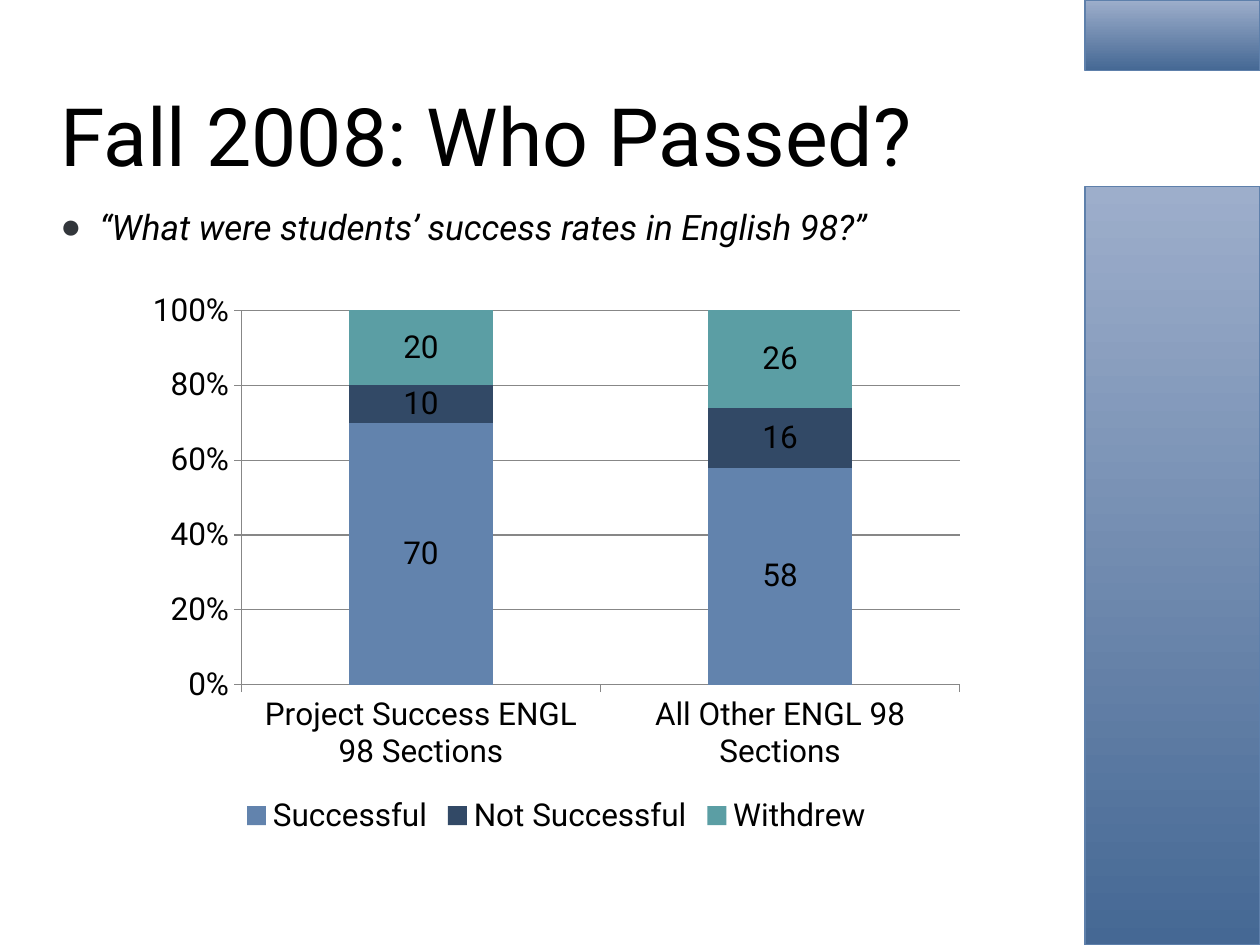
from dataclasses import dataclass

from lxml.etree import SubElement
from pptx import Presentation
from pptx.chart.data import CategoryChartData
from pptx.dml.color import RGBColor as Rgb
from pptx.enum.chart import XL_CHART_TYPE as Kind
from pptx.enum.chart import XL_LEGEND_POSITION as Place
from pptx.enum.chart import XL_TICK_MARK as Tick
from pptx.enum.shapes import MSO_SHAPE as Shape
from pptx.enum.text import MSO_ANCHOR as Anchor
from pptx.enum.text import MSO_AUTO_SIZE as Fit
from pptx.enum.text import PP_ALIGN as Align
from pptx.oxml.ns import qn
from pptx.util import Inches, Pt


@dataclass(frozen=True)
class Theme:
    """Hold the colours, the font and the type sizes."""
    face: str = "Roboto"
    ink: str = "000000"
    dot: str = "32363B"
    edge: str = "5E80AB"
    dark: str = "456894"
    light: str = "9DAECB"
    grid: str = "878787"
    bars: tuple = ("6283AD", "324966", "5B9EA4")
    title: int = 46
    body: int = 20
    chart: int = 18


THEME = Theme()


def color(code):
    """Return the colour for a hex code."""
    return Rgb.from_string(code)


def style(font, size):
    """Give a font the theme's face and ink."""
    font.name = THEME.face
    font.size = Pt(size)
    font.color.rgb = color(THEME.ink)


def place(shape, left, top, width, height):
    """Move and size a shape, in inches."""
    shape.left, shape.top = Inches(left), Inches(top)
    shape.width, shape.height = Inches(width), Inches(height)


def write(shape, text, size, anchor):
    """Fill a placeholder with one left-aligned paragraph."""
    frame = shape.text_frame
    frame.text = text
    frame.word_wrap = True
    frame.auto_size = Fit.NONE
    frame.vertical_anchor = anchor
    para = frame.paragraphs[0]
    para.alignment = Align.LEFT
    para.space_before = Pt(0)
    return para


def add_title(slide, text):
    """Set the slide title."""
    shape = slide.shapes.title
    place(shape, 0.38, 0.53, 7.75, 1.07)
    para = write(shape, text, THEME.title, Anchor.MIDDLE)
    style(para.font, THEME.title)


def add_list(slide, text):
    """Set the bulleted question."""
    shape = slide.placeholders[1]
    place(shape, 0.38, 1.58, 7.75, 5.12)
    para = write(shape, text, THEME.body, Anchor.TOP)
    props = para._p.get_or_add_pPr()
    props.set("marL", str(Inches(0.31)))
    props.set("indent", str(-Inches(0.31)))
    tint = SubElement(props, qn("a:buClr"))
    SubElement(tint, qn("a:srgbClr"), val=THEME.dot)
    SubElement(props, qn("a:buChar"), char="●")
    style(para.font, THEME.body)
    para.font.italic = True


def add_panel(slide, top, height):
    """Add a shaded panel at the right edge."""
    shape = slide.shapes.add_shape(
        Shape.RECTANGLE, Inches(8.61), Inches(top), Inches(1.39), Inches(height))
    shape.shadow.inherit = False
    shape.fill.gradient()
    shape.fill.gradient_angle = 90
    for stop, code in zip(shape.fill.gradient_stops, (THEME.dark, THEME.light)):
        stop.color.rgb = color(code)
    shape.line.color.rgb = color(THEME.edge)
    shape.line.width = Pt(1)


def add_chart(slide, cats, rows):
    """Add the stacked column chart."""
    data = CategoryChartData(number_format="#,##0")
    data.categories = cats
    for name, vals in rows:
        data.add_series(name, vals)
    chart = slide.shapes.add_chart(
        Kind.COLUMN_STACKED_100, Inches(1.08), Inches(2.23),
        Inches(6.67), Inches(4.44), data).chart
    style(chart.font, THEME.chart)
    chart.has_title = False
    chart.has_legend = True
    chart.legend.position = Place.BOTTOM
    chart.legend.include_in_layout = False

    axis = chart.value_axis
    axis.minimum_scale, axis.maximum_scale = 0, 1
    axis.major_unit = 0.2
    axis.tick_labels.number_format = "0%"
    axis.tick_labels.number_format_is_linked = False
    axis.has_major_gridlines = True
    for item in (axis, chart.category_axis):
        item.major_tick_mark = Tick.OUTSIDE
        item.format.line.color.rgb = color(THEME.grid)
    axis.major_gridlines.format.line.color.rgb = color(THEME.grid)

    plot = chart.plots[0]
    plot.vary_by_categories = False
    plot.gap_width, plot.overlap = 150, 100
    for row, code in zip(plot.series, THEME.bars):
        row.format.fill.solid()
        row.format.fill.fore_color.rgb = color(code)
        tags = row.data_labels
        tags.show_value = True
        tags.number_format = "#,##0"
        tags.number_format_is_linked = False
        style(tags.font, THEME.chart)


def main():
    """Build and save the slide."""
    deck = Presentation()
    deck.slide_width, deck.slide_height = Inches(10), Inches(7.5)
    slide = deck.slides.add_slide(deck.slide_layouts[1])
    add_title(slide, "Fall 2008: Who Passed?")
    add_list(slide, "“What were students’ success rates in English 98?”")
    for top, height in ((1.48, 6.02), (0, 0.56)):
        add_panel(slide, top, height)
    add_chart(
        slide,
        ("Project Success ENGL 98 Sections", "All Other ENGL 98 Sections"),
        (("Successful", (70, 58)),
         ("Not Successful", (10, 16)),
         ("Withdrew", (20, 26))))
    deck.save("out.pptx")


if __name__ == "__main__":
    main()
